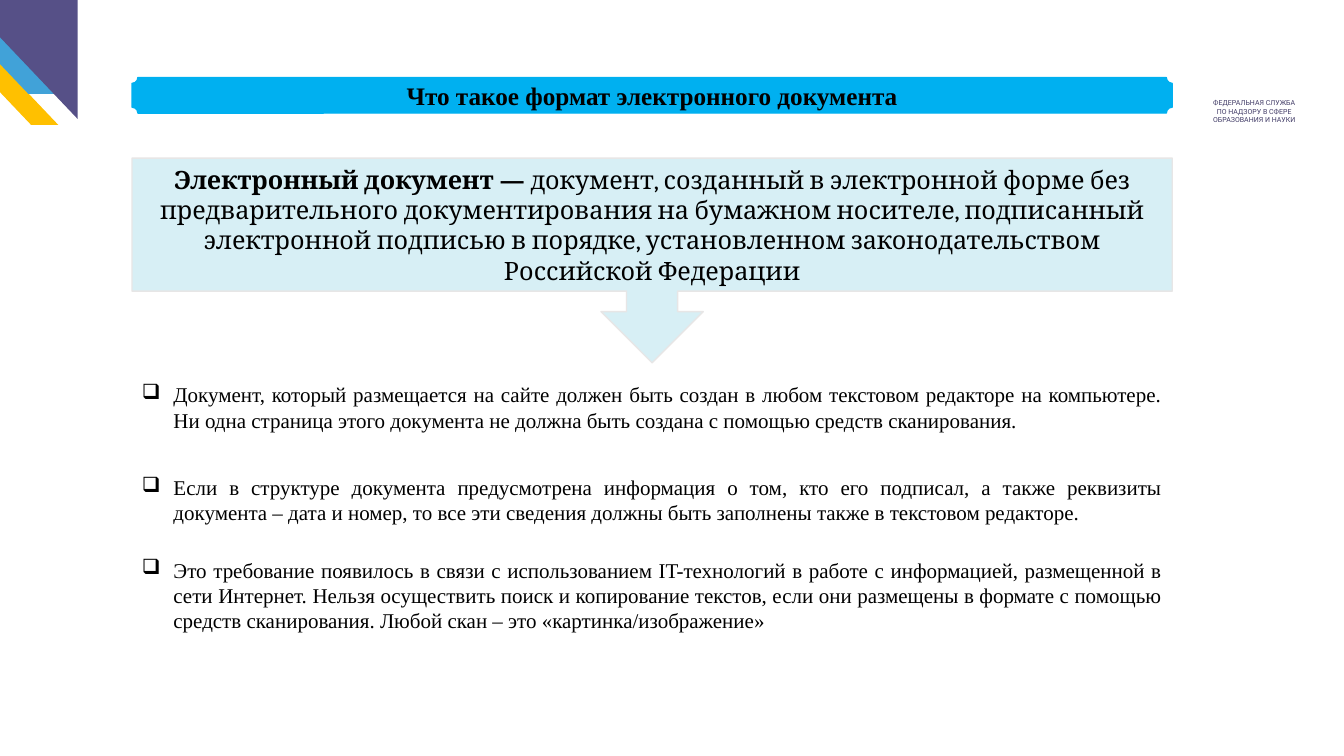
from pptx import Presentation
from pptx.dml.color import RGBColor
from pptx.enum.shapes import MSO_SHAPE as Shape
from pptx.enum.text import MSO_ANCHOR as Anchor, MSO_AUTO_SIZE as AutoSize, PP_ALIGN as Align
from pptx.oxml.ns import qn
from pptx.util import Pt
from lxml import etree

YELLOW = RGBColor(0xFF, 0xC0, 0x00)
BLUE = RGBColor(0x41, 0xA2, 0xD8)
PURPLE = RGBColor(0x56, 0x50, 0x87)
INK = RGBColor(0x41, 0x3B, 0x66)
SKY = RGBColor(0x00, 0xB0, 0xF0)
PALE = RGBColor(0xD7, 0xEF, 0xF5)
GREY = RGBColor(0xE7, 0xE6, 0xE6)
BLACK = RGBColor(0, 0, 0)
SERIF = "Times New Roman"
LEFT, WIDTH = 94.3, 743

deck = Presentation()
deck.slide_width, deck.slide_height = Pt(960), Pt(540)
page = deck.slides.add_slide(deck.slide_layouts[6])


def add_box(kind, left, top, width, height, fill, line=None):
    box = page.shapes.add_shape(kind, Pt(left), Pt(top), Pt(width), Pt(height))
    box.shadow.inherit = False
    box.fill.solid()
    box.fill.fore_color.rgb = fill
    if line is None:
        box.line.fill.background()
    else:
        box.line.color.rgb = line
        box.line.width = Pt(1)
    box.text_frame.word_wrap = True
    box.text_frame.vertical_anchor = Anchor.MIDDLE
    return box


def add_span(para, text, size, font, color=BLACK, bold=False):
    span = para.add_run()
    span.text = text
    span.font.size = Pt(size)
    span.font.name = font
    span.font.color.rgb = color
    span.font.bold = bold


# Corner ornament
for kind, left, top, width, height, color, flips in (
    (Shape.PARALLELOGRAM, -59.8, 2.9, 101.5, 86.4, YELLOW, ["flipH"]),
    (Shape.PARALLELOGRAM, -61.9, -19.4, 101.5, 86.4, BLUE, ["flipH"]),
    (Shape.RIGHT_TRIANGLE, -25.9, -0.7, 81.4, 85.7, PURPLE, ["flipH", "flipV"]),
):
    corner = add_box(kind, left, top, width, height, color)
    if kind == Shape.PARALLELOGRAM:
        corner.adjustments[0] = 0.95
    for flip in flips:
        corner.element.spPr.find(qn("a:xfrm")).set(flip, "1")

# Agency name
agency = page.shapes.add_textbox(Pt(847.4), Pt(67), Pt(97.2), Pt(25.2)).text_frame
agency.word_wrap = True
agency.auto_size = AutoSize.SHAPE_TO_FIT_TEXT
for index, text in enumerate(("ФЕДЕРАЛЬНАЯ СЛУЖБА", "ПО НАДЗОРУ В СФЕРЕ ОБРАЗОВАНИЯ И НАУКИ")):
    para = agency.add_paragraph() if index else agency.paragraphs[0]
    para.alignment = Align.CENTER
    add_span(para, text, 5, "Roboto", INK)

# Title plaque
title = add_box(Shape.PLAQUE, LEFT, 55.4, WIDTH, 25.4, SKY, SKY)
para = title.text_frame.paragraphs[0]
para.alignment = Align.CENTER
add_span(para, "Что такое формат электронного документа", 18, SERIF, bold=True)

# Definition with an arrow below
definition = add_box(Shape.DOWN_ARROW_CALLOUT, LEFT, 113, WIDTH, 146.2, PALE, GREY)
para = definition.text_frame.paragraphs[0]
para.alignment = Align.CENTER
add_span(para, "Электронный документ — ", 18, "Cambria", bold=True)
add_span(para, "документ, созданный в электронной форме без предварительного "
         "документирования на бумажном носителе, подписанный электронной подписью в порядке, "
         "установленном законодательством Российской Федерации", 18, "Cambria")

# Requirements
for top, height, text in (
    (269.3, 43.6, "Документ, который размещается на сайте должен быть создан в любом текстовом "
     "редакторе на компьютере. Ни одна страница этого документа не должна быть создана "
     "с помощью средств сканирования."),
    (335.5, 43.6, "Если в структуре документа предусмотрена информация о том, кто его подписал, "
     "а также реквизиты документа – дата и номер, то все эти сведения должны быть заполнены "
     "также в текстовом редакторе."),
    (394.6, 61.8, "Это требование появилось в связи с использованием IT-технологий в работе "
     "с информацией, размещенной в сети Интернет. Нельзя осуществить поиск и копирование "
     "текстов, если они размещены в формате с помощью средств сканирования. "
     "Любой скан – это «картинка/изображение»"),
):
    frame = page.shapes.add_textbox(Pt(LEFT), Pt(top), Pt(WIDTH), Pt(height)).text_frame
    frame.word_wrap = True
    frame.auto_size = AutoSize.SHAPE_TO_FIT_TEXT
    para = frame.paragraphs[0]
    para.alignment = Align.JUSTIFY
    props = para._p.get_or_add_pPr()
    props.set("marL", str(Pt(22.5)))
    props.set("indent", str(Pt(-22.5)))
    etree.SubElement(props, qn("a:buChar")).set("char", "❑")
    add_span(para, text, 15, SERIF)

deck.save("out.pptx")
